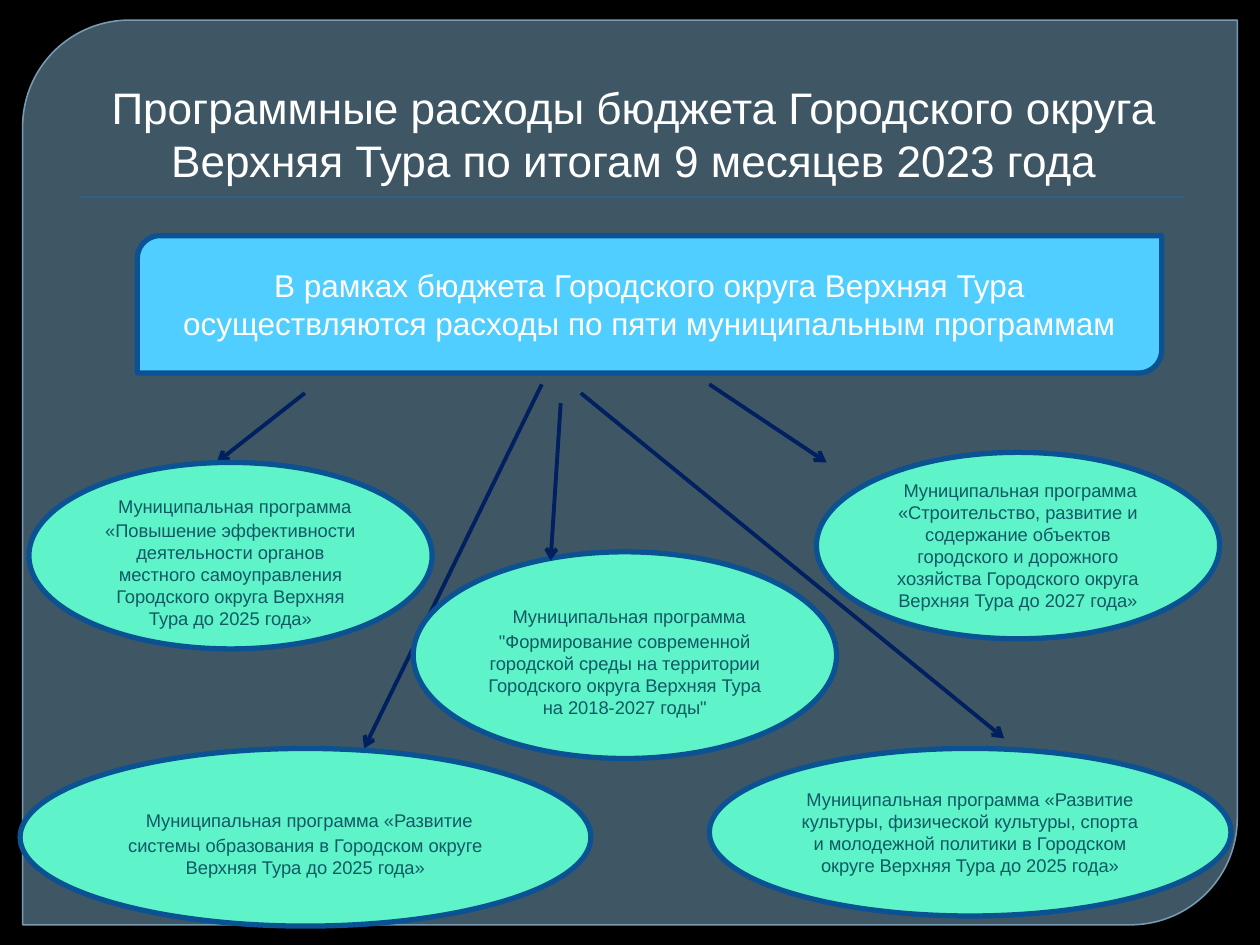
from lxml.etree import SubElement
from pptx import Presentation
from pptx.dml.color import RGBColor
from pptx.enum.shapes import MSO_CONNECTOR, MSO_SHAPE
from pptx.enum.text import MSO_ANCHOR, PP_ALIGN
from pptx.oxml.ns import qn
from pptx.util import Inches, Pt

WHITE, NAVY, TEAL, BORDER = "FFFFFF", "002060", "115964", "0B5292"


def paint(color_format, color):
    """Colour a fill, or a font or line colour, from a hex string."""
    if hasattr(color_format, "solid"):
        color_format.solid()
        color_format = color_format.fore_color
    color_format.rgb = RGBColor.from_string(color)


def add_block(preset, box, fill, border=None, border_width=3, runs=()):
    """Add a filled shape with centred runs of (text, size, font, colour)."""
    block = slide.shapes.add_shape(preset, *[Inches(v) for v in box])
    block.shadow.inherit = False
    paint(block.fill, fill)
    if border:
        paint(block.line.color, border)
        block.line.width = Pt(border_width)
    else:
        block.line.fill.background()
    frame = block.text_frame
    frame.word_wrap = True
    frame.vertical_anchor = MSO_ANCHOR.MIDDLE
    frame.paragraphs[0].alignment = PP_ALIGN.CENTER
    for text, size, font, color in runs:
        run = frame.paragraphs[0].add_run()
        run.text = text
        run.font.size = Pt(size)
        run.font.name = font
        paint(run.font.color, color)
    return block


prs = Presentation()
prs.slide_width, prs.slide_height = Inches(10), Inches(7.5)
slide = prs.slides.add_slide(prs.slide_layouts[5])
paint(slide.background.fill, "000000")

# Translucent panel and the rule under the title
panel = add_block(MSO_SHAPE.ROUND_2_DIAG_RECTANGLE, (0.18, 0.16, 9.64, 7.18),
                  "61869C", "779BB2", 0.87)
panel.adjustments[0] = 0.118
panel_color = panel.element.spPr.find(qn("a:solidFill"))[0]
SubElement(panel_color, qn("a:alpha"), val="65000")
add_block(MSO_SHAPE.RECTANGLE, (0.64, 1.56, 8.75, 0.01), "0F6FC6")

# Title, brought in front of the panel
title = slide.shapes.title
title.element.getparent().append(title.element)
title.left, title.top, title.width, title.height = (
    Inches(v) for v in (0.5, 0.28, 9, 1.25))
title.text_frame.vertical_anchor = MSO_ANCHOR.BOTTOM
heading = title.text_frame.paragraphs[0]
heading.alignment = PP_ALIGN.CENTER
heading._p.get_or_add_pPr().set("marL", str(Inches(0.06)))
heading_run = heading.add_run()
heading_run.text = ("Программные расходы бюджета Городского округа "
                    "Верхняя Тура по итогам 9 месяцев 2023 года")
heading_run.font.size = Pt(25.2)
heading_run.font.name = "Arial"
paint(heading_run.font.color, WHITE)

# Summary box
add_block(MSO_SHAPE.ROUND_2_DIAG_RECTANGLE, (1.09, 1.87, 8.13, 1.09),
          "4FCEFF", BORDER,
          runs=[("В рамках бюджета Городского округа Верхняя Тура осуществляются "
                 "расходы по пяти муниципальным программам", 18, "Arial", WHITE)])

# Arrows from the summary to the programmes
arrows = [
    ((2.42, 3.12), (1.72, 3.67)),
    ((4.3, 3.05), (2.89, 5.94)),
    ((4.61, 3.12), (7.97, 5.86)),
    ((5.63, 3.05), (6.56, 3.67)),
    ((4.45, 3.2), (4.37, 4.45)),
]
for start, end in arrows:
    arrow = slide.shapes.add_connector(
        MSO_CONNECTOR.STRAIGHT, *[Inches(v) for v in start + end])
    paint(arrow.line.color, NAVY)
    arrow.line.width = Pt(2.25)
    SubElement(arrow.line._get_or_add_ln(), qn("a:tailEnd"), type="arrow")
    SubElement(arrow.element.spPr, qn("a:effectLst"))
central_arrow = arrow

# Programmes: box, size and font of the leading space, name
programmes = [
    ((0.23, 3.67, 3.2, 1.48), (18, "Arial"),
     "«Повышение эффективности деятельности органов местного самоуправления "
     "Городского округа Верхняя Тура до 2025 года»"),
    ((6.48, 3.59, 3.2, 1.48), (10.5, "Roboto Slab"),
     "«Строительство, развитие и содержание объектов городского и дорожного "
     "хозяйства Городского округа Верхняя Тура до 2027 года»"),
    ((5.63, 5.94, 4.14, 1.33), None,
     "«Развитие культуры, физической культуры, спорта и молодежной политики "
     "в Городском округе Верхняя Тура до 2025 года»"),
    ((0.16, 5.94, 4.53, 1.41), (18, "Times New Roman"),
     "«Развитие системы образования в Городском округе Верхняя Тура до 2025 года»"),
    ((3.28, 4.38, 3.36, 1.64), (18, "Arial"),
     '"Формирование современной городской среды на территории Городского округа '
     'Верхняя Тура на 2018-2027 годы"'),
]
for box, lead, name in programmes:
    runs = [(" ", *lead, TEAL)] if lead else []
    runs.append((f"Муниципальная программа {name}", 10.5, "Arial", TEAL))
    add_block(MSO_SHAPE.OVAL, box, "5FF3CA", BORDER, runs=runs)

# The central arrow ends on top of its ellipse
central_arrow.element.getparent().append(central_arrow.element)

prs.save("out.pptx")
